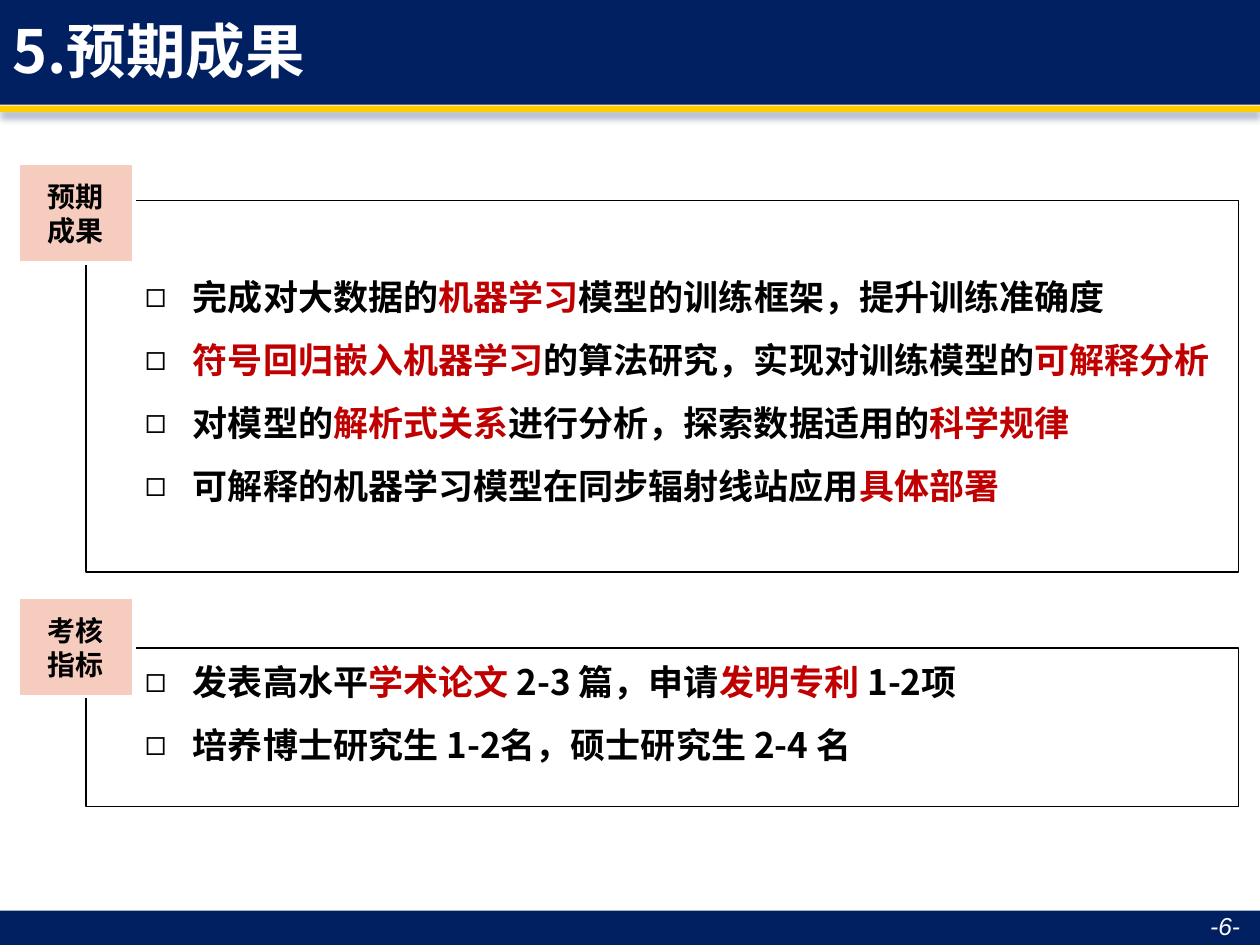
from lxml import etree
from pptx import Presentation
from pptx.dml.color import RGBColor
from pptx.enum.shapes import MSO_SHAPE
from pptx.enum.text import MSO_ANCHOR, MSO_AUTO_SIZE, PP_ALIGN
from pptx.oxml.ns import qn
from pptx.util import Cm, Pt

RECTANGLE = MSO_SHAPE.RECTANGLE
TOP, MIDDLE = MSO_ANCHOR.TOP, MSO_ANCHOR.MIDDLE
LEFT, CENTER, RIGHT = PP_ALIGN.LEFT, PP_ALIGN.CENTER, PP_ALIGN.RIGHT
NO_AUTOFIT = MSO_AUTO_SIZE.NONE

COLORS = {
    "navy": "012061",
    "gold": "FFCC00",
    "peach": "F6CCBE",
    "red": "C00000",
    "black": "000000",
    "white": "FFFFFF",
}
CJK_FONT = "Noto Sans CJK SC"
SLIDE_WIDTH, SLIDE_HEIGHT = 25.4, 19.05
BANNER_HEIGHT = 2.11

# Each list item is a sequence of (text, highlighted) pieces.
OUTCOMES = [
    [("完成对大数据的", False), ("机器学习", True),
     ("模型的训练框架，提升训练准确度", False)],
    [("符号回归嵌入机器学习", True), ("的算法研究，实现对训练模型的", False),
     ("可解释分析", True)],
    [("对模型的", False), ("解析式关系", True),
     ("进行分析，探索数据适用的", False), ("科学规律", True)],
    [("可解释的机器学习模型在同步辐射线站应用", False), ("具体部署", True)],
]
INDICATORS = [
    [("发表高水平", False), ("学术论文 ", True), ("2-3 篇，申请", False),
     ("发明专利 ", True), ("1-2项", False)],
    [("培养博士研究生 1-2名，硕士研究生 2-4 名", False)],
]


def color(name):
    return RGBColor.from_string(COLORS[name])


def place(shape, left, top, width, height):
    shape.left, shape.top = Cm(left), Cm(top)
    shape.width, shape.height = Cm(width), Cm(height)


def set_insets(frame, left, top, right, bottom):
    frame.margin_left, frame.margin_top = Cm(left), Cm(top)
    frame.margin_right, frame.margin_bottom = Cm(right), Cm(bottom)


def style_cjk(paragraph, size, color_name):
    """Bold Chinese text, with the same face for Latin and East Asian."""
    font = paragraph.font
    font.size, font.bold, font.name = Pt(size), True, CJK_FONT
    font.color.rgb = color(color_name)
    defaults = paragraph._p.pPr.find(qn("a:defRPr"))
    etree.SubElement(defaults, qn("a:ea"), typeface=CJK_FONT)


def add_band(slide, depth, top, height, fill):
    """Full-width band, placed behind the placeholders."""
    band = slide.shapes.add_shape(
        RECTANGLE, 0, Cm(top), Cm(SLIDE_WIDTH), Cm(height))
    band.shadow.inherit = False
    band.fill.solid()
    band.fill.fore_color.rgb = color(fill)
    band.line.fill.background()
    slide.shapes._spTree.insert(2 + depth, band._element)
    return band


def add_drop_shadow(shape):
    effects = shape._element.spPr.find(qn("a:effectLst"))
    shadow = etree.SubElement(
        effects, qn("a:outerShdw"), blurRad=str(Pt(4)), dist=str(Pt(3)),
        dir="5400000", algn="t", rotWithShape="0")
    tint = etree.SubElement(shadow, qn("a:srgbClr"), val=COLORS["navy"])
    etree.SubElement(tint, qn("a:alpha"), val="40000")


def fill_title(title, text):
    place(title, 0, -0.05, SLIDE_WIDTH, BANNER_HEIGHT)
    frame = title.text_frame
    frame.text = text
    frame.auto_size, frame.vertical_anchor = NO_AUTOFIT, MIDDLE
    heading = frame.paragraphs[0]
    heading.alignment = LEFT
    style_cjk(heading, 34, "white")


def add_bullet(paragraph):
    properties = paragraph._p.get_or_add_pPr()
    indent = Cm(0.97)
    properties.set("marL", str(indent))
    properties.set("indent", str(-indent))
    bullet_color = etree.SubElement(properties, qn("a:buClr"))
    etree.SubElement(bullet_color, qn("a:srgbClr"), val=COLORS["black"])
    etree.SubElement(properties, qn("a:buFont"), typeface="Arial")
    etree.SubElement(properties, qn("a:buChar"), char="◻")


def fill_list(body, items, top, height, top_inset):
    place(body, 1.73, top, 23.24, height)
    body.line.color.rgb = color("black")
    body.line.width = Pt(1)
    frame = body.text_frame
    frame.word_wrap, frame.auto_size = True, NO_AUTOFIT
    frame.vertical_anchor = TOP
    set_insets(frame, 1.19, top_inset, 0.25, 0.1)
    for index, pieces in enumerate(items):
        paragraph = frame.add_paragraph() if index else frame.paragraphs[0]
        add_bullet(paragraph)
        paragraph.alignment = LEFT
        paragraph.line_spacing = Pt(24)
        paragraph.space_before, paragraph.space_after = Pt(0), Pt(12)
        style_cjk(paragraph, 20, "black")
        for text, highlighted in pieces:
            run = paragraph.add_run()
            run.text = text
            if highlighted:
                run.font.color.rgb = color("red")


def add_section_label(slide, text, top):
    label = slide.shapes.add_shape(
        RECTANGLE, Cm(0.36), Cm(top), Cm(2.34), Cm(2))
    label.shadow.inherit = False
    label.fill.solid()
    label.fill.fore_color.rgb = color("peach")
    label.line.color.rgb = color("white")
    label.line.width = Pt(2)
    frame = label.text_frame
    frame.text = text
    frame.word_wrap, frame.vertical_anchor = True, MIDDLE
    set_insets(frame, 0.1, 0.1, 0.1, 0.1)
    for paragraph in frame.paragraphs:
        paragraph.alignment = CENTER
        paragraph.line_spacing = Pt(19.4)
        style_cjk(paragraph, 16, "black")


def add_page_number(slide, text):
    box = slide.shapes.add_textbox(Cm(19.33), Cm(18.26), Cm(5.92), Cm(0.79))
    frame = box.text_frame
    frame.text = text
    frame.word_wrap, frame.vertical_anchor = True, MIDDLE
    number = frame.paragraphs[0]
    number.alignment = RIGHT
    number.font.name, number.font.size = "Arial", Pt(14)
    number.font.italic = True
    number.font.color.rgb = color("white")


def main():
    deck = Presentation()
    deck.slide_width, deck.slide_height = Cm(SLIDE_WIDTH), Cm(SLIDE_HEIGHT)
    slide = deck.slides.add_slide(deck.slide_layouts.get_by_name("Two Content"))
    title, outcome_list, indicator_list = slide.placeholders

    add_band(slide, 0, 0, BANNER_HEIGHT, "navy")
    add_band(slide, 1, 18.36, 0.69, "navy")
    add_drop_shadow(add_band(slide, 2, 2.13, 0.13, "gold"))

    fill_title(title, "5.预期成果")
    fill_list(outcome_list, OUTCOMES, 4.04, 7.49, 1.52)
    fill_list(indicator_list, INDICATORS, 13.06, 3.2, 0.26)
    add_section_label(slide, "预期\n成果", 3.3)
    add_section_label(slide, "考核\n指标", 12.04)
    add_page_number(slide, "-6-")
    deck.save("out.pptx")


if __name__ == "__main__":
    main()
